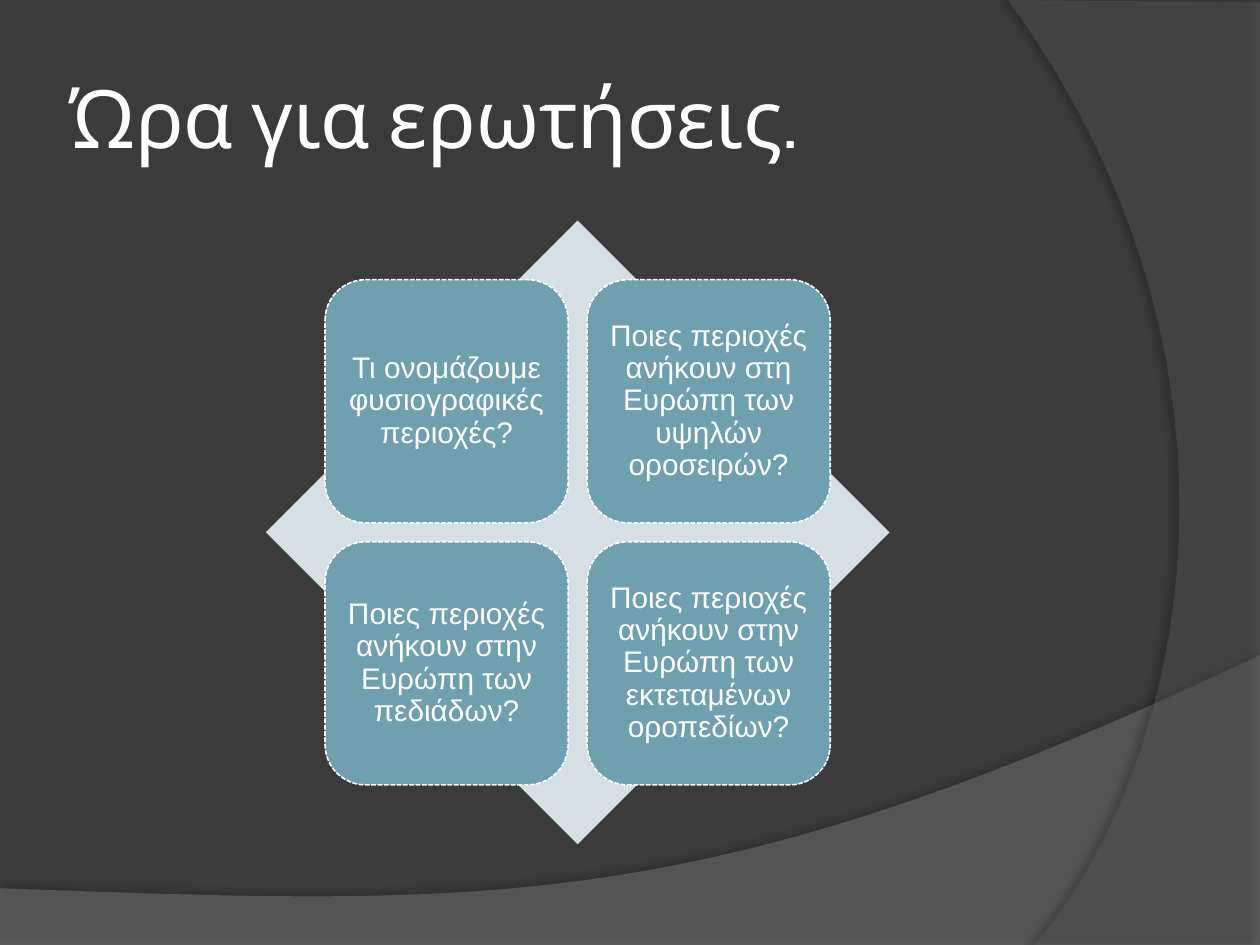
from lxml import etree
from pptx import Presentation
from pptx.dml.color import RGBColor
from pptx.enum.dml import MSO_LINE
from pptx.enum.shapes import MSO_SHAPE
from pptx.enum.text import MSO_ANCHOR, MSO_AUTO_SIZE, PP_ALIGN
from pptx.oxml.ns import qn
from pptx.util import Inches, Pt

DIAMOND, ROUNDED = MSO_SHAPE.DIAMOND, MSO_SHAPE.ROUNDED_RECTANGLE
MIDDLE, NO_FIT = MSO_ANCHOR.MIDDLE, MSO_AUTO_SIZE.NONE
LEFT, CENTER = PP_ALIGN.LEFT, PP_ALIGN.CENTER
DASH = MSO_LINE.SQUARE_DOT
TITLE_ONLY = 5

COLORS = {
    "background": "3B3B3B",
    "wave": "7F7F7F",
    "arc": "5E5E5E",
    "shadow": "000000",
    "diamond": "D5DFE4",
    "card": "6EA0B0",
    "white": "FFFFFF",
}
QUESTIONS = [
    "Τι ονομάζουμε φυσιογραφικές περιοχές?",
    "Ποιες περιοχές ανήκουν στη Ευρώπη των υψηλών οροσειρών?",
    "Ποιες περιοχές ανήκουν στην Ευρώπη των πεδιάδων?",
    "Ποιες περιοχές ανήκουν στην Ευρώπη των εκτεταμένων οροπεδίων?",
]


def rgb(name):
    return RGBColor.from_string(COLORS[name])


def paint(sp, color):
    sp.shadow.inherit = False
    sp.fill.solid()
    sp.fill.fore_color.rgb = rgb(color)
    sp.line.fill.background()


def write(sp, text, size, font, align, inset, spacing=1.0):
    tf = sp.text_frame
    frame = {"word_wrap": True, "auto_size": NO_FIT, "vertical_anchor": MIDDLE}
    for side in ("left", "top", "right", "bottom"):
        frame[f"margin_{side}"] = Inches(inset)
    for key, value in frame.items():
        setattr(tf, key, value)
    p = tf.paragraphs[0]
    p.alignment, p.line_spacing = align, spacing
    r = p.add_run()
    r.text = text
    for key, value in {"size": Pt(size), "name": font}.items():
        setattr(r.font, key, value)
    r.font.color.rgb = rgb("white")


def bezier(p0, p1, p2, p3, steps=60):
    """Points along a cubic curve, without its start."""
    points = []
    for i in range(1, steps + 1):
        t = i / steps
        u = 1 - t
        points.append(tuple(
            u**3 * a + 3 * u * u * t * b + 3 * u * t * t * c + t**3 * d
            for a, b, c, d in zip(p0, p1, p2, p3)))
    return points


def add_alpha(parent, percent):
    etree.SubElement(parent, qn("a:alpha"), val=str(percent * 1000))


def add_band(s, points, color, opacity, shadow_opacity, distance, angle):
    """Translucent background area with a soft shadow."""
    points = [(Inches(x), Inches(y)) for x, y in points]
    builder = s.shapes.build_freeform(*points[0])
    builder.add_line_segments(points[1:], close=True)
    sp = builder.convert_to_shape()
    paint(sp, color)
    props = sp.element.spPr
    add_alpha(props.find(qn("a:solidFill"))[0], opacity)
    shadow = etree.SubElement(
        props.find(qn("a:effectLst")), qn("a:outerShdw"), blurRad=str(Pt(4)),
        dist=str(Pt(distance)), dir=str(angle * 60000), algn="ctr", rotWithShape="0")
    tone = etree.SubElement(shadow, qn("a:srgbClr"), val=COLORS["shadow"])
    add_alpha(tone, shadow_opacity)


def add_background(s, width, height):
    s.background.fill.solid()
    s.background.fill.fore_color.rgb = rgb("background")
    # Wave along the bottom
    wave = [(0, 7.05), (0, height), (width, height), (width, 5.2)]
    wave += bezier((width, 5.2), (5.59, 7.29), (3.91, 7.19), (0, 7.05))
    add_band(s, wave, "wave", 45, 35, 3.5, 270)
    # Arc down the right side
    arc = [(width, 0.02), (width, height), (8.21, height)]
    arc += bezier((8.21, height), (9.35, 6.19), (10.18, 3), (8, 0))
    add_band(s, arc, "arc", 40, 45, 4, 180)


def add_title(s, left, top, width, height, text):
    title = s.shapes.title
    s.shapes.element.append(title.element)  # in front of the background
    box = {"left": left, "top": top, "width": width, "height": height}
    for key, value in box.items():
        setattr(title, key, Inches(value))
    write(title, text, 46, "Cabin", LEFT, 0.05)


def add_matrix(s, left, top, size, questions):
    """Diamond with a two-by-two grid of cards centred on it."""
    group = s.shapes.add_group_shape()
    diamond = group.shapes.add_shape(
        DIAMOND, Inches(left), Inches(top), Inches(size), Inches(size))
    paint(diamond, "diamond")
    card, gap = 1.93, 0.15
    margin = (size - 2 * card - gap) / 2
    for i, question in enumerate(questions):
        row, col = divmod(i, 2)
        x = left + margin + col * (card + gap)
        y = top + margin + row * (card + gap)
        sp = group.shapes.add_shape(
            ROUNDED, Inches(x), Inches(y), Inches(card), Inches(card))
        paint(sp, "card")
        sp.line.color.rgb = rgb("white")
        sp.line.width, sp.line.dash_style = Pt(0.9), DASH
        write(sp, question, 17, "Arial", CENTER, 0.05, 0.9)


def main():
    prs = Presentation()
    prs.slide_width, prs.slide_height = Inches(10), Inches(7.5)
    s = prs.slides.add_slide(prs.slide_layouts[TITLE_ONLY])
    add_background(s, 10, 7.5)
    add_title(s, 0.5, 0.3, 8.17, 1.25, "Ώρα για ερωτήσεις.")
    add_matrix(s, 2.11, 1.75, 4.95, QUESTIONS)
    prs.save("out.pptx")


if __name__ == "__main__":
    main()
